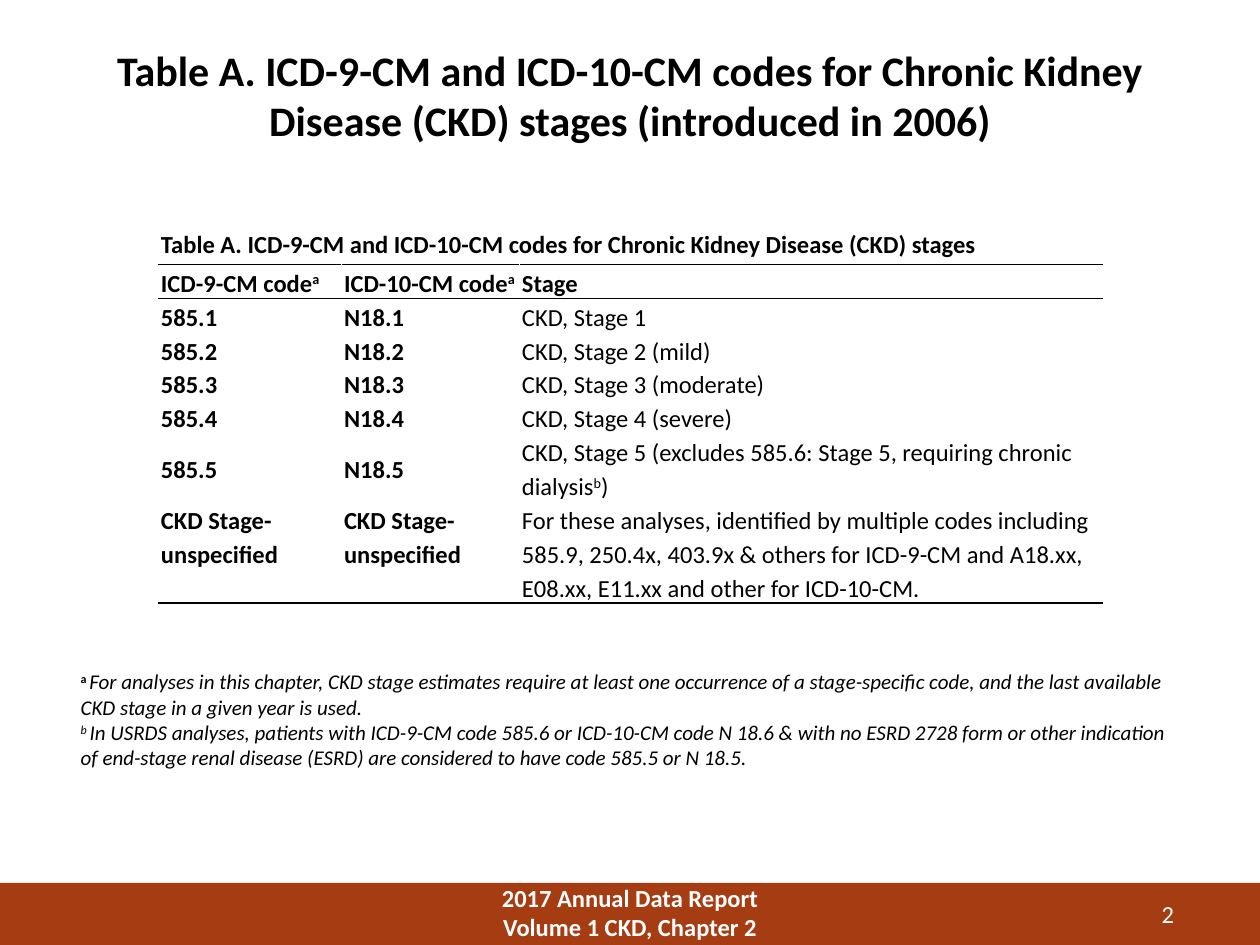
import pptx
import pptx.dml.color
import pptx.enum.shapes
import pptx.enum.text
import pptx.oxml
import pptx.util
from pptx.oxml.ns import nsdecls

Pt = pptx.util.Pt
ALIGN = pptx.enum.text.PP_ALIGN
ANCHOR = pptx.enum.text.MSO_ANCHOR

# Content: "^" marks a superscript run
TITLE = ("Table A. ICD-9-CM and ICD-10-CM codes for Chronic Kidney "
         "Disease (CKD) stages (introduced in 2006)")
CAPTION = "Table A. ICD-9-CM and ICD-10-CM codes for Chronic Kidney Disease (CKD) stages"
HEADINGS = (["ICD-9-CM code", "^a"], ["ICD-10-CM code", "^a"], ["Stage"])
STAGES = [
    (["585.1"], ["N18.1"], ["CKD, Stage 1"]),
    (["585.2"], ["N18.2"], ["CKD, Stage 2 (mild)"]),
    (["585.3"], ["N18.3"], ["CKD, Stage 3 (moderate)"]),
    (["585.4"], ["N18.4"], ["CKD, Stage 4 (severe)"]),
    (["585.5"], ["N18.5"],
     ["CKD, Stage 5 (excludes 585.6: Stage 5, requiring chronic dialysis", "^b", ")"]),
    (["CKD Stage-unspecified"], ["CKD Stage-unspecified"],
     ["For these analyses, identified by multiple codes including 585.9, 250.4x, "
      "403.9x & others for ICD-9-CM and A18.xx, E08.xx, E11.xx and other for ICD-10-CM."]),
]
FOOTNOTES = [
    ("^a ", "For analyses in this chapter, CKD stage estimates require at least one "
            "occurrence of a stage-specific code, and the last available CKD stage in a "
            "given year is used."),
    ("^b ", "In USRDS analyses, patients with ICD-9-CM code 585.6 or ICD-10-CM code N 18.6 "
            "& with no ESRD 2728 form or other indication of end-stage renal disease (ESRD) "
            "are considered to have code 585.5 or N 18.5."),
]
REPORT_LINES = ["2017 Annual Data Report", "Volume 1 CKD, Chapter 2"]
PAGE_NUMBER = "2"

# Table geometry
TABLE_LEFT, TABLE_TOP, TABLE_HEIGHT = 90.5, 131.8, 212.4
COLUMN_WIDTHS = [104.6, 101.7, 332.8]
ROW_HEIGHTS = [19.4] + [15.1] * 6 + [30.2]
BLACK, WHITE, RUST = "000000", "FFFFFF", "A63C12"


def rgb(value):
    return pptx.dml.color.RGBColor.from_string(value)


def add_run(paragraph, text, size, color=BLACK, bold=False, italic=False):
    run = paragraph.add_run()
    run.text = text.removeprefix("^")
    font = run.font
    font.name, font.size, font.bold, font.italic = "Calibri", Pt(size), bold, italic
    font.color.rgb = rgb(color)
    if text.startswith("^"):
        font._element.set("baseline", "30000")


def add_box(slide, left, top, width, height):
    frame = slide.shapes.add_textbox(Pt(left), Pt(top), Pt(width), Pt(height)).text_frame
    frame.word_wrap = True
    return frame


def add_rule(cell, side):
    """Draw a black 1 pt border on one side: lnT or lnB."""
    properties = cell._tc.get_or_add_tcPr()
    rule = pptx.oxml.parse_xml(
        f'<a:{side} {nsdecls("a")} w="12700"><a:solidFill><a:srgbClr val="{BLACK}"/>'
        f'</a:solidFill></a:{side}>')
    position = sum(child.tag.endswith("}lnT") for child in properties)
    properties.insert(position, rule)


def fill_cell(cell, runs, bold, anchor):
    cell.margin_left = cell.margin_right = Pt(1.5)
    cell.margin_top = cell.margin_bottom = 0
    cell.vertical_anchor = anchor
    cell.fill.background()
    paragraph = cell.text_frame.paragraphs[0]
    for text in runs:
        add_run(paragraph, text, 14, bold=bold)
    return paragraph


def add_code_table(slide):
    rows = [(([CAPTION]), [], []), HEADINGS, *STAGES]
    frame = slide.shapes.add_table(len(rows), len(COLUMN_WIDTHS), Pt(TABLE_LEFT), Pt(TABLE_TOP),
                                   Pt(sum(COLUMN_WIDTHS)), Pt(TABLE_HEIGHT))
    table = frame.table
    table.first_row = table.horz_banding = False
    for column, width in zip(table.columns, COLUMN_WIDTHS):
        column.width = Pt(width)
    for row, height in zip(table.rows, ROW_HEIGHTS):
        row.height = Pt(height)
    frame.height = Pt(TABLE_HEIGHT)
    table.cell(0, 0).merge(table.cell(0, 2))

    last = len(rows) - 1
    for r, row in enumerate(rows):
        for c, runs in enumerate(row):
            cell = table.cell(r, c)
            bold = r < 2 or c < 2
            anchor = ANCHOR.TOP if r in (0, last) else ANCHOR.MIDDLE
            paragraph = fill_cell(cell, runs, bold, anchor)
            if r == 0:
                paragraph.space_after = Pt(6)
            else:
                paragraph.line_spacing = 1.15
            if r in (1, 2):
                add_rule(cell, "lnT")
            if r in (0, 1, last):
                add_rule(cell, "lnB")


def main():
    deck = pptx.Presentation()
    deck.slide_width, deck.slide_height = Pt(720), Pt(540)
    slide = deck.slides.add_slide(deck.slide_layouts[5])

    # Footer band with report name and page number
    band = slide.shapes.add_shape(pptx.enum.shapes.MSO_SHAPE.RECTANGLE,
                                  0, Pt(504.5), Pt(720), Pt(36))
    band.shadow.inherit = False
    band.fill.solid()
    band.fill.fore_color.rgb = rgb(RUST)
    band.line.fill.background()
    report = add_box(slide, 258, 501, 204, 39)
    for i, line in enumerate(REPORT_LINES):
        paragraph = report.add_paragraph() if i else report.paragraphs[0]
        paragraph.alignment = ALIGN.CENTER
        add_run(paragraph, line, 14, WHITE, bold=True)
    page = add_box(slide, 606, 510, 72, 21.6).paragraphs[0]
    page.alignment = ALIGN.RIGHT
    add_run(page, PAGE_NUMBER, 14, WHITE)

    # Title
    title = slide.shapes.title
    title.left, title.top, title.width, title.height = Pt(36), Pt(21.6), Pt(648), Pt(90)
    title.text_frame.auto_size = pptx.enum.text.MSO_AUTO_SIZE.NONE
    title.text_frame.vertical_anchor = ANCHOR.TOP
    heading = title.text_frame.paragraphs[0]
    heading.alignment = ALIGN.CENTER
    add_run(heading, TITLE, 24, bold=True)

    add_code_table(slide)

    # Footnotes share one paragraph, split by a line break
    notes = add_box(slide, 39, 378.7, 643, 65.5).paragraphs[0]
    for i, (mark, note) in enumerate(FOOTNOTES):
        if i:
            notes.add_line_break()
        add_run(notes, mark, 12, bold=i == 0, italic=i > 0)
        add_run(notes, note, 12, italic=True)

    deck.save("out.pptx")


if __name__ == "__main__":
    main()
